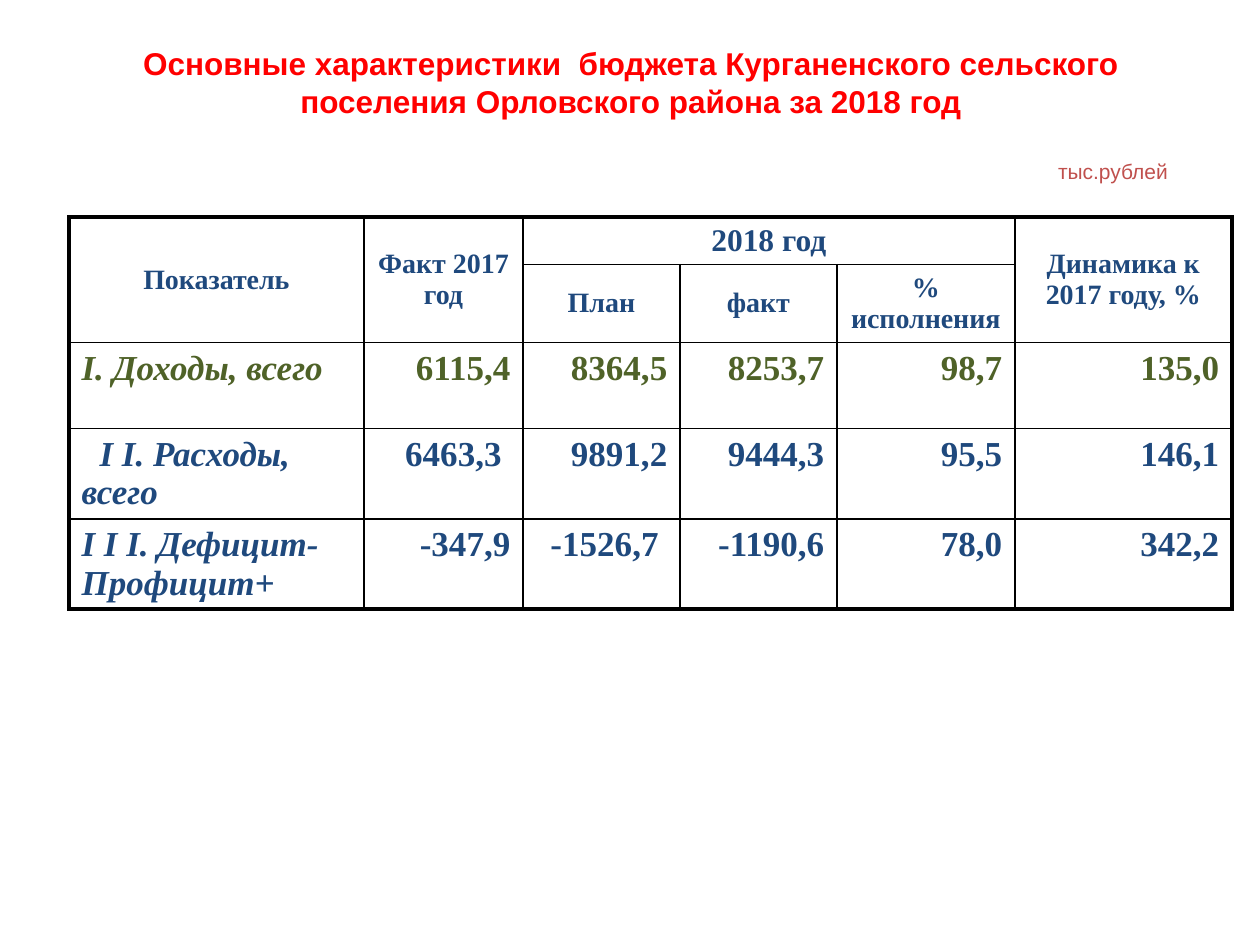
from dataclasses import dataclass

import pptx
import pptx.dml.color
import pptx.enum.text
import pptx.oxml
import pptx.oxml.ns
import pptx.util

RGB = pptx.dml.color.RGBColor
ALIGN = pptx.enum.text.PP_ALIGN
ANCHOR = pptx.enum.text.MSO_ANCHOR
Pt = pptx.util.Pt

RED = RGB(0xFF, 0x00, 0x00)
BRICK = RGB(0xC0, 0x50, 0x4D)
NAVY = RGB(0x1F, 0x49, 0x7D)
OLIVE = RGB(0x4F, 0x62, 0x28)
BLACK = RGB(0x00, 0x00, 0x00)

EMU_PER_PX = 914400 // 126
COLUMNS = (295, 159, 157, 157, 178, 217)
ROWS = (43, 78, 86, 86, 86)
OUTER_LINE, INNER_LINE = 2.25, 1


@dataclass(frozen=True)
class Heading:
    row: int
    column: int
    text: str
    row_span: int = 1
    column_span: int = 1
    size: int = 16


@dataclass(frozen=True)
class Indicator:
    name: str
    values: tuple[str, ...]
    color: RGB = NAVY
    indent: int = 0


HEADINGS = (
    Heading(0, 0, "Показатель", row_span=2),
    Heading(0, 1, "Факт 2017 год", row_span=2),
    Heading(0, 2, "2018 год", column_span=3, size=18),
    Heading(0, 5, "Динамика к 2017 году, %", row_span=2),
    Heading(1, 2, "План"),
    Heading(1, 3, "факт"),
    Heading(1, 4, "% исполнения"),
)
INDICATORS = (
    Indicator("I. Доходы, всего", ("6115,4", "8364,5", "8253,7", "98,7", "135,0"), OLIVE),
    Indicator("I I. Расходы, всего", ("6463,3 ", "9891,2", "9444,3", "95,5", "146,1"), indent=18),
    Indicator("I I I. Дефицит-Профицит+", ("-347,9", "-1526,7 ", "-1190,6", "78,0", "342,2")),
)


def px(length: int) -> pptx.util.Emu:
    return pptx.util.Emu(length * EMU_PER_PX)


def write(paragraph, text: str, color: RGB, align=ALIGN.LEFT, space: float = 0, **font_format) -> None:
    """Fill a paragraph with one formatted run."""
    paragraph.alignment = align
    paragraph.space_before = Pt(space)
    run = paragraph.add_run()
    run.text = text
    run.font.color.rgb = color
    for name, value in font_format.items():
        setattr(run.font, name, value)


def draw_borders(cell, row: int, column: int) -> None:
    """Heavy lines on the outside of the table, thin ones inside."""
    outer_edges = {
        "lnL": column == 0,
        "lnR": column == len(COLUMNS) - 1,
        "lnT": row == 0,
        "lnB": row == len(ROWS) - 1,
    }
    properties = cell._tc.get_or_add_tcPr()
    for tag, is_outer in outer_edges.items():
        width = Pt(OUTER_LINE if is_outer else INNER_LINE)
        properties.append(pptx.oxml.parse_xml(
            f'<a:{tag} {pptx.oxml.ns.nsdecls("a")} w="{width}"><a:solidFill>'
            f'<a:srgbClr val="{BLACK}"/></a:solidFill></a:{tag}>'))
    cell.fill.background()


def draw_title(slide) -> None:
    title = slide.shapes.title
    title.left, title.top, title.width, title.height = map(px, (64, 35, 1134, 158))
    frame = title.text_frame
    frame_format = {
        "word_wrap": True,
        "auto_size": pptx.enum.text.MSO_AUTO_SIZE.NONE,
        "vertical_anchor": ANCHOR.MIDDLE,
        "margin_left": px(30),
        "margin_right": px(30),
    }
    for name, value in frame_format.items():
        setattr(frame, name, value)
    write(frame.paragraphs[0],
          "Основные характеристики  бюджета Курганенского сельского "
          "поселения Орловского района за 2018 год",
          RED, ALIGN.CENTER, name="Arial", size=Pt(18), bold=True)
    write(frame.add_paragraph(), "тыс.рублей", BRICK, ALIGN.RIGHT, 22,
          name="Arial", size=Pt(12), bold=False)


def draw_heading(table, heading: Heading) -> None:
    cell = table.cell(heading.row, heading.column)
    if heading.row_span * heading.column_span > 1:
        cell.merge(table.cell(heading.row + heading.row_span - 1,
                              heading.column + heading.column_span - 1))
    cell.vertical_anchor = ANCHOR.MIDDLE
    write(cell.text_frame.paragraphs[0], heading.text, NAVY, ALIGN.CENTER, 4.3,
          name="Times New Roman", size=Pt(heading.size), bold=True)


def draw_indicator(table, row: int, indicator: Indicator) -> None:
    for column, text in enumerate((indicator.name, *indicator.values)):
        is_name = column == 0
        paragraph = table.cell(row, column).text_frame.paragraphs[0]
        write(paragraph, text, indicator.color, ALIGN.LEFT if is_name else ALIGN.RIGHT, 4.8,
              name="Times New Roman", size=Pt(20), bold=True, italic=is_name)
        if is_name and indicator.indent:
            paragraph._p.get_or_add_pPr().set("indent", str(px(indicator.indent)))


def draw_budget(slide) -> None:
    table = slide.shapes.add_table(len(ROWS), len(COLUMNS), px(69), px(217),
                                   px(sum(COLUMNS)), px(sum(ROWS))).table
    table.first_row = table.horz_banding = False
    for column, width in zip(table.columns, COLUMNS):
        column.width = px(width)
    for row, height in zip(table.rows, ROWS):
        row.height = px(height)
    for row in range(len(ROWS)):
        for column in range(len(COLUMNS)):
            draw_borders(table.cell(row, column), row, column)
    for heading in HEADINGS:
        draw_heading(table, heading)
    for row, indicator in enumerate(INDICATORS, start=2):
        draw_indicator(table, row, indicator)


def main() -> None:
    deck = pptx.Presentation()
    deck.slide_width, deck.slide_height = px(1260), px(945)
    slide = deck.slides.add_slide(deck.slide_layouts[5])
    draw_title(slide)
    draw_budget(slide)
    deck.save("out.pptx")


if __name__ == "__main__":
    main()
